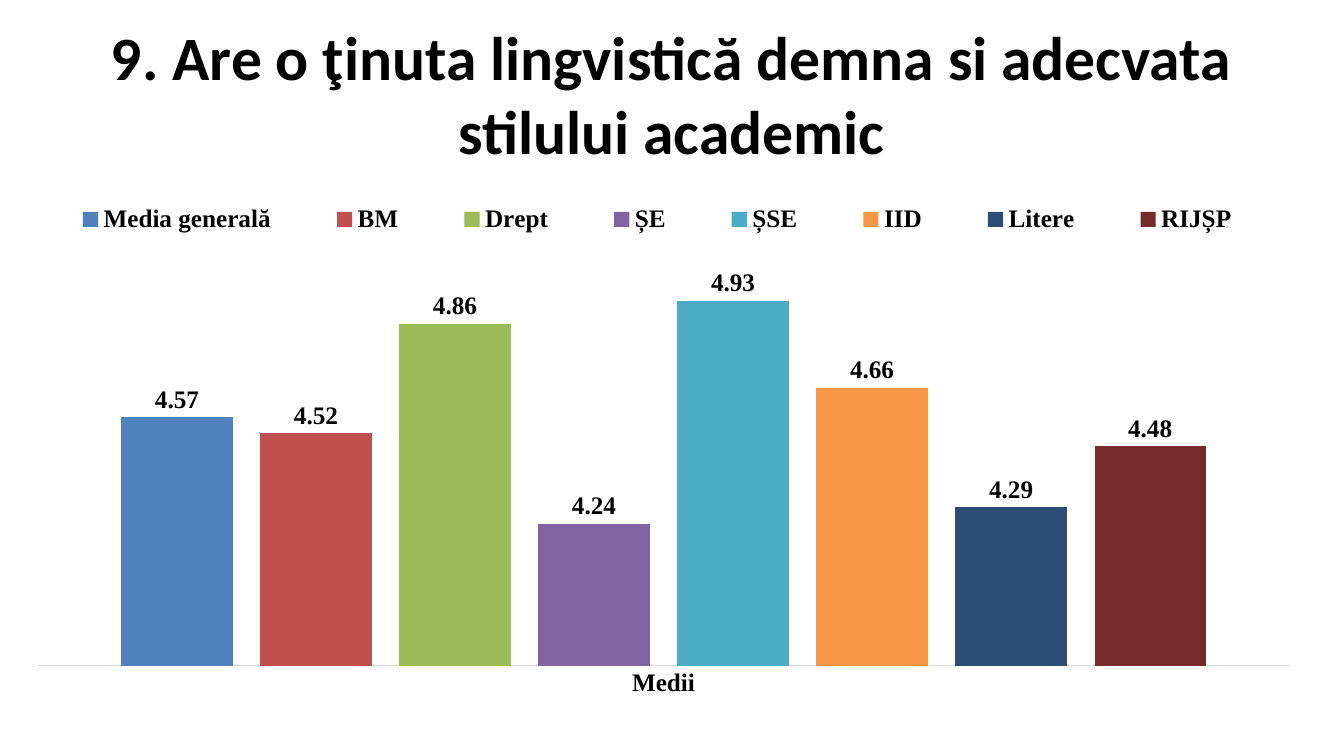
from lxml.etree import SubElement
from pptx import Presentation
from pptx.chart.data import CategoryChartData
from pptx.dml.color import RGBColor
from pptx.enum.chart import XL_CHART_TYPE, XL_LABEL_POSITION, XL_LEGEND_POSITION, XL_TICK_MARK
from pptx.enum.text import MSO_ANCHOR, PP_ALIGN
from pptx.oxml.ns import qn
from pptx.util import Pt

COLORS = {"text": "000000", "axis": "D9D9D9"}
SCORES = [
    ("Media generală", 4.57, "4F81BD"),
    ("BM", 4.52, "C0504D"),
    ("Drept", 4.86, "9BBB59"),
    ("ȘE", 4.24, "8064A2"),
    ("ȘSE", 4.93, "4BACC6"),
    ("IID", 4.66, "F79646"),
    ("Litere", 4.29, "2C4D75"),
    ("RIJȘP", 4.48, "772C2A"),
]


def style(font, name, size):
    font.name = name
    font.size = Pt(size)
    font.bold = True
    font.color.rgb = RGBColor.from_string(COLORS["text"])


def place(layout, target, x, y, w, h):
    """Fix a chart part at fractions of the chart area."""
    manual = SubElement(layout, qn("c:manualLayout"))
    parts = [("xMode", "edge"), ("yMode", "edge"), ("x", x), ("y", y), ("w", w), ("h", h)]
    if target:
        parts.insert(0, ("layoutTarget", target))
    for tag, val in parts:
        SubElement(manual, qn("c:" + tag)).set("val", str(val))


deck = Presentation()
deck.slide_width, deck.slide_height = Pt(960), Pt(540)
slide = deck.slides.add_slide(deck.slide_layouts[5])

# Title
title = slide.shapes.title
title.left, title.top, title.width, title.height = Pt(48), Pt(21.6), Pt(864), Pt(90)
title.text_frame.vertical_anchor = MSO_ANCHOR.MIDDLE
para = title.text_frame.paragraphs[0]
para.alignment = PP_ALIGN.CENTER
run = para.add_run()
run.text = "9. Are o ţinuta lingvistică demna si adecvata stilului academic"
style(run.font, "Calibri", 44)

# Chart
data = CategoryChartData(number_format="0.00")
data.categories = ["Medii"]
for name, score, color in SCORES:
    data.add_series(name, [score])
chart = slide.shapes.add_chart(
    XL_CHART_TYPE.COLUMN_CLUSTERED, Pt(18), Pt(126), Pt(912), Pt(384), data
).chart
style(chart.font, "Times New Roman", 18)
chart.has_title = False

# Axes
marks = chart.value_axis
marks.minimum_scale, marks.maximum_scale = 3.8, 5
marks.has_major_gridlines = False
marks.visible = False
base = chart.category_axis
base.major_tick_mark = XL_TICK_MARK.NONE
base.format.line.color.rgb = RGBColor.from_string(COLORS["axis"])
base.format.line.width = Pt(0.75)
style(base.tick_labels.font, "Times New Roman", 18)

# Columns
plot = chart.plots[0]
plot.gap_width, plot.overlap = 150, -25
plot.vary_by_categories = False
for series, (name, score, color) in zip(plot.series, SCORES):
    series.format.fill.solid()
    series.format.fill.fore_color.rgb = RGBColor.from_string(color)
    labels = series.data_labels
    labels.show_value = True
    labels.number_format = "0.00"
    labels.number_format_is_linked = False
    labels.position = XL_LABEL_POSITION.OUTSIDE_END
    style(labels.font, "Times New Roman", 18)

# Legend and layout
chart.has_legend = True
legend = chart.legend
legend.position = XL_LEGEND_POSITION.TOP
legend.include_in_layout = False
style(legend.font, "Times New Roman", 18)
area = chart._chartSpace.chart.plotArea
spot = area.find(qn("c:layout"))
if spot is None:
    spot = SubElement(area, qn("c:layout"))
    area.insert(0, spot)
place(spot, "inner", 0.01, 0.19, 0.98, 0.72)
key = legend._element
spot = key.find(qn("c:layout"))
if spot is None:
    spot = SubElement(key, qn("c:layout"))
    key.find(qn("c:legendPos")).addnext(spot)
place(spot, None, 0, 0.03, 0.99, 0.1)

deck.save("out.pptx")
